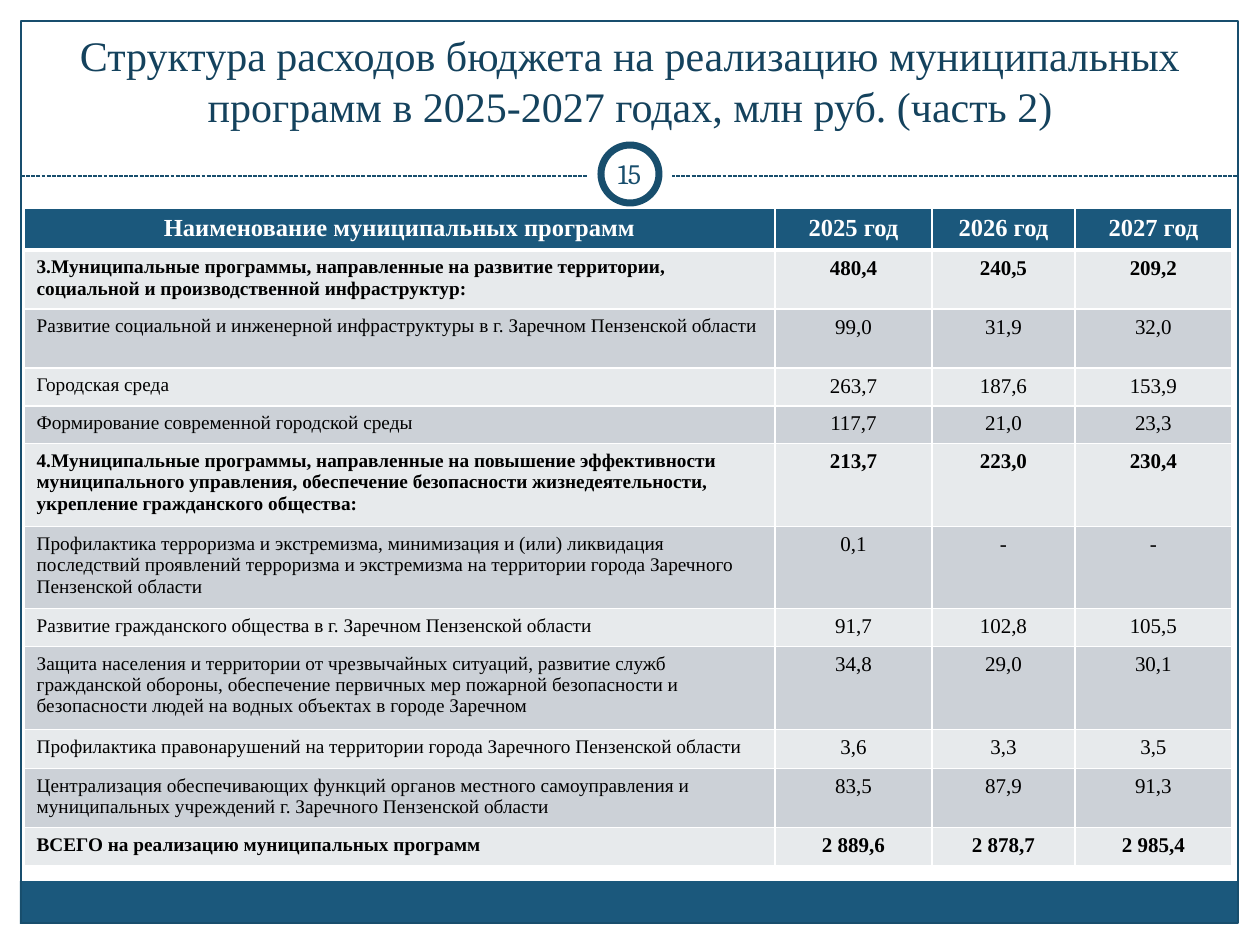
"""Build the slide on municipal programme spending in 2025-2027."""
from dataclasses import dataclass

from pptx import Presentation
from pptx import util as u
from pptx.dml.color import RGBColor
from pptx.enum import dml, shapes, text
from pptx.oxml import parse_xml
from pptx.oxml.ns import nsdecls

PX_PER_INCH = 126
WHITE = RGBColor(0xFF, 0xFF, 0xFF)
BLACK = RGBColor(0x00, 0x00, 0x00)
BLUE = RGBColor(0x1B, 0x58, 0x7C)
EDGE = RGBColor(0x18, 0x4E, 0x6D)
TITLE_BLUE = RGBColor(0x14, 0x42, 0x5D)
LIGHT = RGBColor(0xE7, 0xEA, 0xEC)
GREY = RGBColor(0xCC, 0xD1, 0xD7)
SERIF = "Times New Roman"
CENTER = text.PP_ALIGN.CENTER
COLUMN_WIDTHS = (751, 157, 143, 157)


@dataclass(frozen=True)
class Box:
    left: int
    top: int
    width: int
    height: int

    def emu(self) -> tuple:
        return tuple(px(n) for n in (self.left, self.top, self.width, self.height))


@dataclass(frozen=True)
class Programme:
    name: str
    values: tuple
    height: int
    bold: bool = False


@dataclass(frozen=True)
class Figure:
    kind: shapes.MSO_SHAPE
    box: Box
    fill: RGBColor | None = None
    line: RGBColor | None = None
    weight: float = 0


HEADER = Programme("Наименование муниципальных программ",
                   ("2025 год", "2026 год", "2027 год"), 39, True)
PROGRAMMES = (
    Programme("3.Муниципальные программы, направленные на развитие территории, "
              "социальной и производственной инфраструктур:",
              ("480,4", "240,5", "209,2"), 59, True),
    Programme("Развитие социальной и инженерной инфраструктуры в г. Заречном "
              "Пензенской области", ("99,0", "31,9", "32,0"), 59),
    Programme("Городская среда", ("263,7", "187,6", "153,9"), 36),
    Programme("Формирование современной городской среды",
              ("117,7", "21,0", "23,3"), 36),
    Programme("4.Муниципальные программы, направленные на повышение эффективности "
              "муниципального управления, обеспечение безопасности "
              "жизнедеятельности, укрепление гражданского общества:",
              ("213,7", "223,0", "230,4"), 83, True),
    Programme("Профилактика терроризма и экстремизма, минимизация и (или) "
              "ликвидация последствий проявлений терроризма и экстремизма на "
              "территории города Заречного Пензенской области",
              ("0,1", "-", "-"), 82),
    Programme("Развитие гражданского общества в г. Заречном Пензенской области",
              ("91,7", "102,8", "105,5"), 36),
    Programme("Защита населения и территории от чрезвычайных ситуаций, развитие "
              "служб гражданской обороны, обеспечение первичных мер пожарной "
              "безопасности и безопасности людей на водных объектах в городе "
              "Заречном", ("34,8", "29,0", "30,1"), 83),
    Programme("Профилактика правонарушений на территории города Заречного "
              "Пензенской области", ("3,6", "3,3", "3,5"), 39),
    Programme("Централизация обеспечивающих функций органов местного "
              "самоуправления и муниципальных учреждений г. Заречного "
              "Пензенской области", ("83,5", "87,9", "91,3"), 59),
    Programme("ВСЕГО на реализацию муниципальных программ",
              ("2 889,6", "2 878,7", "2 985,4"), 36, True),
)
BOTTOM_BAR = Figure(shapes.MSO_SHAPE.RECTANGLE, Box(20, 881, 1217, 43), BLUE)
FRAME = Figure(shapes.MSO_SHAPE.RECTANGLE, Box(21, 21, 1217, 902),
               line=EDGE, weight=0.75)
BADGE = Figure(shapes.MSO_SHAPE.OVAL, Box(588, 132, 84, 84), WHITE)
RING = Figure(shapes.MSO_SHAPE.OVAL, Box(601, 145, 58, 58), WHITE, EDGE, 4)


def px(length: int) -> int:
    return u.Emu(round(length * 914400 / PX_PER_INCH))


def write(frame, words: str, *, size: int, color: RGBColor, font: str = SERIF,
          bold: bool = False, align=CENTER, anchor=None) -> None:
    frame.word_wrap = True
    if anchor is not None:
        frame.vertical_anchor = anchor
    para = frame.paragraphs[0]
    para.alignment = align
    span = para.add_run()
    span.text = words
    span.font.name = font
    span.font.size = u.Pt(size)
    span.font.bold = bold
    span.font.color.rgb = color


def draw_figure(page, figure: Figure) -> None:
    shape = page.shapes.add_shape(figure.kind, *figure.box.emu())
    shape.shadow.inherit = False
    if figure.fill is None:
        shape.fill.background()
    else:
        shape.fill.solid()
        shape.fill.fore_color.rgb = figure.fill
    if figure.line is None:
        shape.line.fill.background()
    else:
        shape.line.color.rgb = figure.line
        shape.line.width = u.Pt(figure.weight)


def draw_divider(page) -> None:
    divider = page.shapes.add_connector(
        shapes.MSO_CONNECTOR.STRAIGHT, px(21), px(176), px(1238), px(176))
    divider.line.color.rgb = EDGE
    divider.line.width = u.Pt(0.75)
    divider.line.dash_style = dml.MSO_LINE.SQUARE_DOT
    divider._element.spPr.append(parse_xml(f"<a:effectLst {nsdecls('a')}/>"))


def set_borders(cell, **weights: int) -> None:
    properties = cell._tc.get_or_add_tcPr()
    for side in "LRTB":
        width = u.Pt(weights.get(side, 1))
        properties.append(parse_xml(
            f'<a:ln{side} {nsdecls("a")} w="{width}"><a:solidFill>'
            f'<a:srgbClr val="{WHITE}"/></a:solidFill></a:ln{side}>'))


def draw_table(page) -> None:
    rows = (HEADER, *PROGRAMMES)
    box = Box(24, 208, sum(COLUMN_WIDTHS), sum(row.height for row in rows))
    table = page.shapes.add_table(len(rows), len(COLUMN_WIDTHS), *box.emu()).table
    for column, width in zip(table.columns, COLUMN_WIDTHS):
        column.width = px(width)
    for i, row in enumerate(rows):
        table.rows[i].height = px(row.height)
        header = i == 0
        fill = BLUE if header else LIGHT if i % 2 else GREY
        thick = {0: {"B": 3}, 1: {"T": 3}}.get(i, {})
        for j, words in enumerate((row.name, *row.values)):
            cell = table.cell(i, j)
            set_borders(cell, **thick)
            cell.fill.solid()
            cell.fill.fore_color.rgb = fill
            label = j == 0 and not header
            write(cell.text_frame, words, bold=row.bold,
                  size=14 if header else 11 if label else 12,
                  color=WHITE if header else BLACK,
                  align=text.PP_ALIGN.LEFT if label else CENTER)


def draw_title(page) -> None:
    title = page.shapes.title
    title.left, title.top, title.width, title.height = Box(42, 32, 1176, 105).emu()
    title.text_frame.auto_size = text.MSO_AUTO_SIZE.NONE
    write(title.text_frame, "Структура расходов бюджета на реализацию муниципальных "
          "программ в 2025-2027 годах, млн руб. (часть 2)",
          size=24, color=TITLE_BLUE, anchor=text.MSO_ANCHOR.BOTTOM)


def draw_page_number(page) -> None:
    frame = page.shapes.add_textbox(*Box(598, 143, 63, 60).emu()).text_frame
    frame.margin_left = frame.margin_right = px(6)
    frame.margin_top = frame.margin_bottom = px(6)
    write(frame, "15", size=16, color=EDGE, font="Cambria",
          anchor=text.MSO_ANCHOR.MIDDLE)


def main() -> None:
    deck = Presentation()
    deck.slide_width, deck.slide_height = px(1260), px(945)
    page = deck.slides.add_slide(deck.slide_layouts[5])
    draw_title(page)
    for figure in (BOTTOM_BAR, FRAME):
        draw_figure(page, figure)
    draw_divider(page)
    for figure in (BADGE, RING):
        draw_figure(page, figure)
    draw_page_number(page)
    draw_table(page)
    deck.save("out.pptx")


if __name__ == "__main__":
    main()
